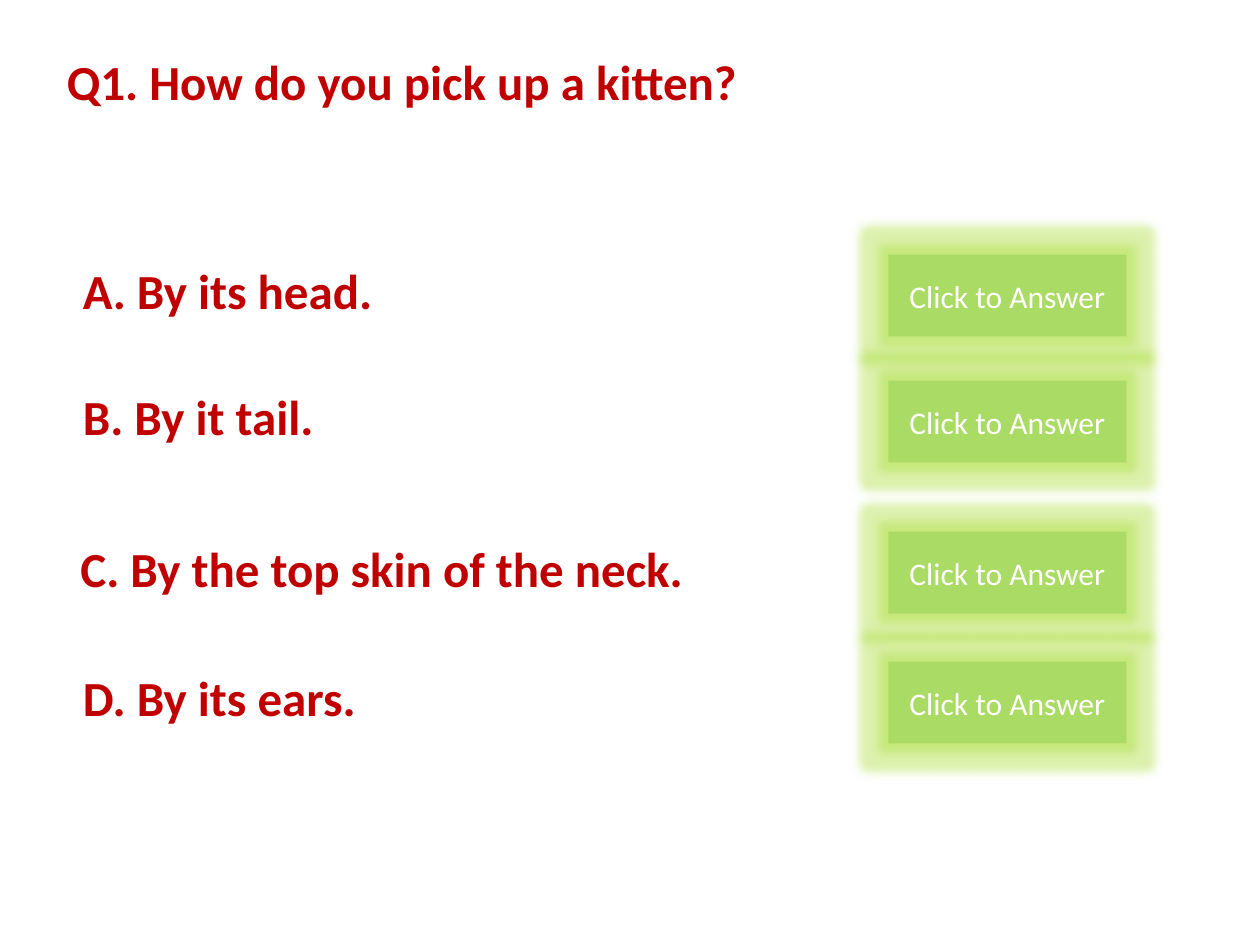
from lxml.etree import SubElement
from pptx import Presentation
from pptx.dml.color import RGBColor
from pptx.enum.shapes import MSO_SHAPE
from pptx.enum.text import MSO_ANCHOR, MSO_AUTO_SIZE, PP_ALIGN
from pptx.oxml.ns import qn
from pptx.util import Inches, Pt

QUESTION = "Q1. How do you pick up a kitten?"
ANSWERS = [
    ("A. By its head.", 0.56, 2.02, 2.53),
    ("B. By it tail.", 0.56, 3.02, 2.06),
    ("C. By the top skin of the neck.", 0.54, 4.22, 5.13),
    ("D. By its ears.", 0.56, 5.25, 2.4),
]
BUTTON = "Click to Answer"
BUTTON_LEFT, BUTTON_W, BUTTON_H = 7.05, 1.89, 0.65
LINE_H = 0.57
RED, GREEN, GLOW, WHITE = "C00000", "92D050", "A8DD33", "FFFFFF"


def color(value):
    return RGBColor.from_string(value)


def write(sp, text, size, ink, align, bold=False, wrap=False):
    tf = sp.text_frame
    tf.word_wrap = wrap
    tf.auto_size = MSO_AUTO_SIZE.NONE
    tf.vertical_anchor = MSO_ANCHOR.MIDDLE
    p = tf.paragraphs[0]
    p.alignment = align
    r = p.add_run()
    r.text = text
    r.font.name = "Calibri"
    r.font.size = Pt(size)
    r.font.bold = bold
    r.font.color.rgb = color(ink)


def set_alpha(parent, percent):
    SubElement(parent, qn("a:alpha"), val=str(percent * 1000))


def add_glow(sp, value, radius, percent):
    effects = sp._element.spPr.find(qn("a:effectLst"))
    glow = SubElement(effects, qn("a:glow"), rad=str(Pt(radius)))
    set_alpha(SubElement(glow, qn("a:srgbClr"), val=value), percent)


def add_button(s, top):
    sp = s.shapes.add_shape(MSO_SHAPE.RECTANGLE, Inches(BUTTON_LEFT), Inches(top),
                            Inches(BUTTON_W), Inches(BUTTON_H))
    sp.shadow.inherit = False
    sp.fill.solid()
    sp.fill.fore_color.rgb = color(GREEN)
    set_alpha(sp._element.spPr.find(qn("a:solidFill"))[0], 54)
    sp.line.fill.background()
    add_glow(sp, GLOW, 11, 40)
    write(sp, BUTTON, 18, WHITE, PP_ALIGN.CENTER, wrap=True)


prs = Presentation()
prs.slide_width, prs.slide_height = Inches(10), Inches(7.5)
s = prs.slides.add_slide(prs.slide_layouts[5])

title = s.shapes.title
title.left, title.top = Inches(0.43), Inches(0.36)
title.width, title.height = Inches(5.59), Inches(LINE_H)
write(title, QUESTION, 28, RED, PP_ALIGN.JUSTIFY, bold=True)

for text, left, top, width in ANSWERS:
    box = s.shapes.add_textbox(Inches(left), Inches(top), Inches(width), Inches(LINE_H))
    write(box, text, 28, RED, PP_ALIGN.JUSTIFY, bold=True)
    add_button(s, top)

prs.save("out.pptx")
